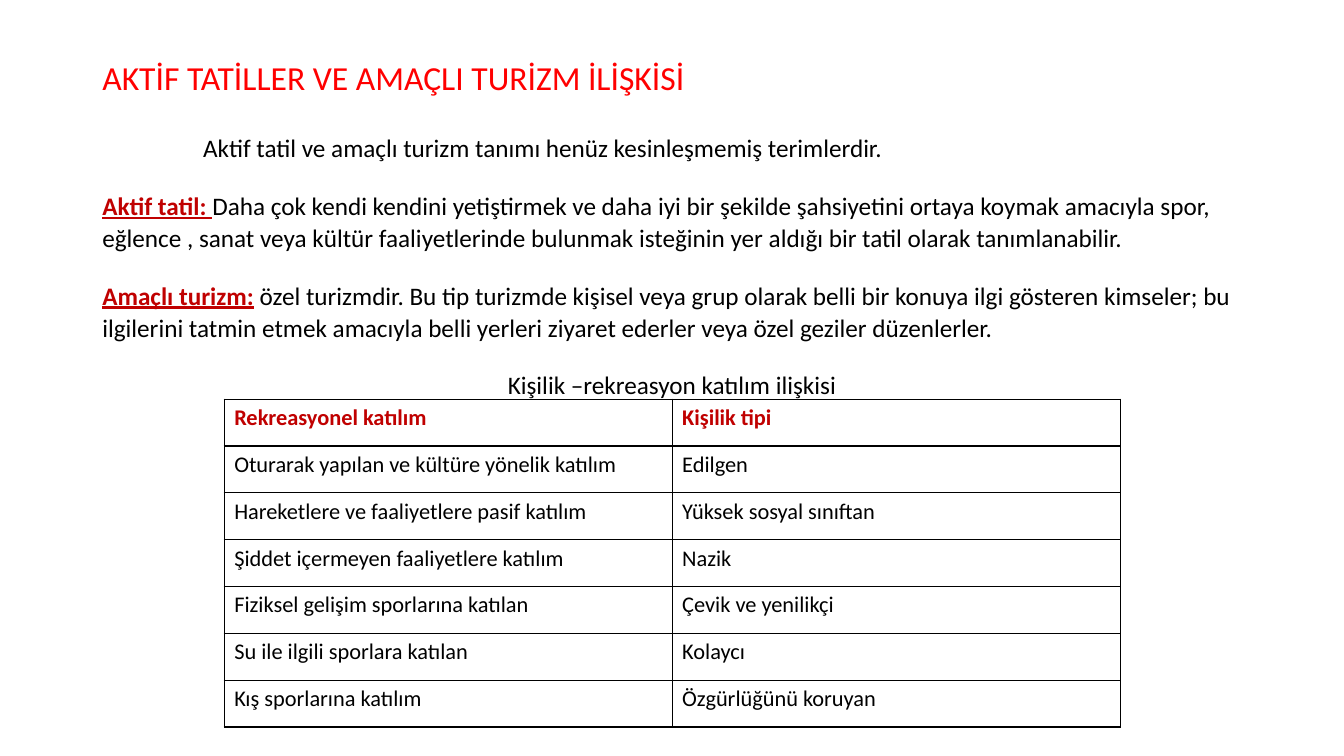
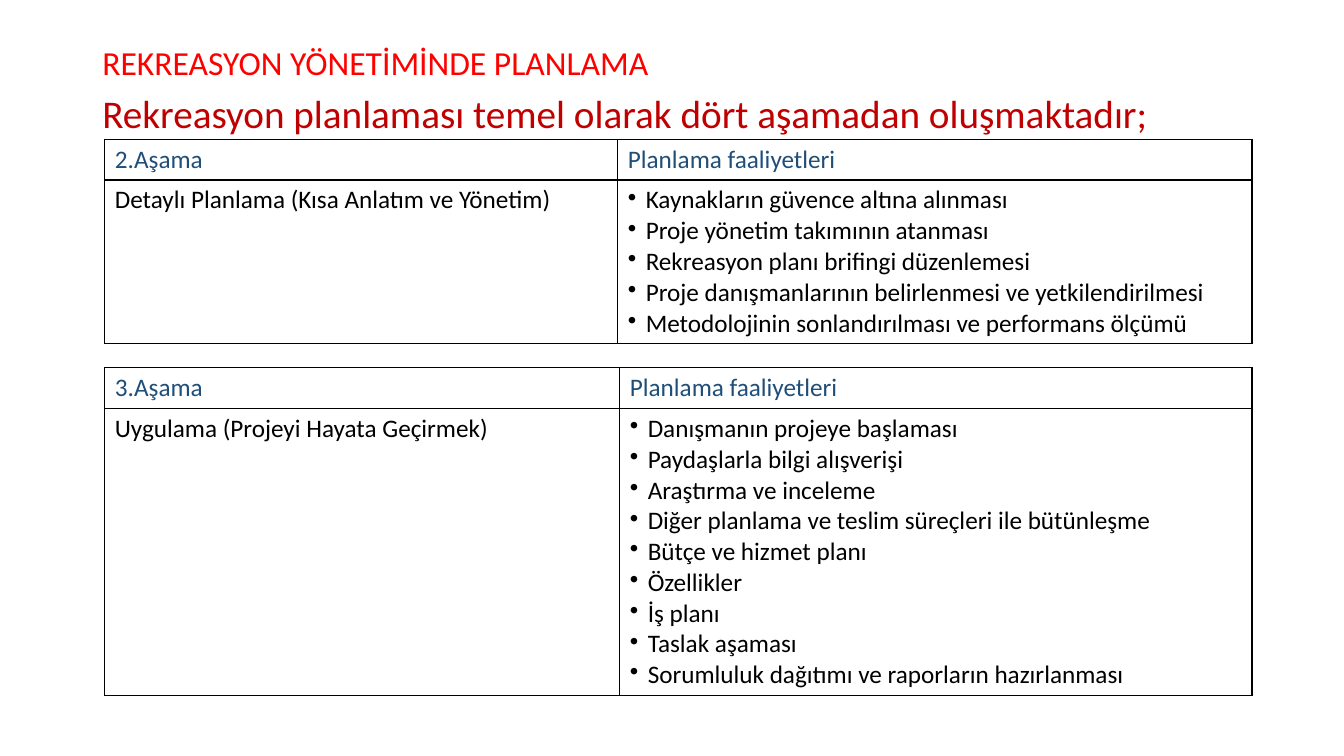
from lxml import etree
from pptx import Presentation
from pptx.dml.color import RGBColor
from pptx.enum.text import MSO_ANCHOR, PP_ALIGN
from pptx.oxml.ns import qn
from pptx.util import Cm, Pt

CENTER = PP_ALIGN.CENTER
MIDDLE = MSO_ANCHOR.MIDDLE
TOP = MSO_ANCHOR.TOP

BLACK, RED, DARK_RED, NAVY = "000000", "FF0000", "C00000", "1F4E79"
TERM = {"bold": True, "underline": True}


def color(value):
    return RGBColor.from_string(value)


class DeckBuilder:
    font = "Calibri"
    left, width = 2.33, 29.21
    bullet_indent = 0.45

    def __init__(self):
        self.deck = Presentation()
        self.deck.slide_width = Cm(33.87)
        self.deck.slide_height = Cm(19.05)
        self.page = None

    def new_page(self):
        self.page = self.deck.slides.add_slide(self.deck.slide_layouts[6])

    def span(self, para, text, size, ink=BLACK, **formats):
        span = para.add_run()
        span.text = text
        span.font.color.rgb = color(ink)
        for name, value in {"name": self.font, "size": Pt(size), **formats}.items():
            setattr(span.font, name, value)

    def text(self, top, height, paragraphs, size, anchor=TOP, **formats):
        box = self.page.shapes.add_textbox(Cm(self.left), Cm(top), Cm(self.width), Cm(height))
        frame = box.text_frame
        frame.word_wrap = True
        frame.vertical_anchor = anchor
        for index, (spans, extra, indent) in enumerate(paragraphs):
            para = frame.add_paragraph() if index else frame.paragraphs[0]
            for name, value in {**formats, **extra}.items():
                setattr(para, name, value)
            if indent:
                para._p.get_or_add_pPr().set("indent", str(Cm(indent)))
            for words, ink, style in spans:
                self.span(para, words, size, ink, **style)

    def title(self, words, height):
        self.text(1.02, height, [([(words, RED, {})], {}, 0)], 24, MIDDLE, line_spacing=0.9)

    def borders(self, cell):
        properties = cell._tc.get_or_add_tcPr()
        for index, side in enumerate(("lnL", "lnR", "lnT", "lnB")):
            line = etree.Element(qn(f"a:{side}"), w=str(Pt(1)))
            fill = etree.SubElement(line, qn("a:solidFill"))
            etree.SubElement(fill, qn("a:srgbClr"), val=BLACK)
            properties.insert(index, line)

    def bullet(self, para):
        properties = para._p.get_or_add_pPr()
        properties.set("marL", str(Cm(self.bullet_indent)))
        properties.set("indent", str(-Cm(self.bullet_indent)))
        etree.SubElement(properties, qn("a:buChar"), char="•")

    def cell(self, cell, content, size, ink, bold):
        cell.fill.background()
        self.borders(cell)
        bulleted = isinstance(content, list)
        for index, words in enumerate(content if bulleted else [content]):
            frame = cell.text_frame
            para = frame.add_paragraph() if index else frame.paragraphs[0]
            if bulleted:
                self.bullet(para)
            self.span(para, words, size, ink, bold=bold)

    def table(self, left, top, columns, heights, rows, size, head_ink, head_bold=False):
        table = self.page.shapes.add_table(
            len(rows), len(columns), Cm(left), Cm(top), Cm(sum(columns)), Cm(sum(heights))
        ).table
        table.first_row = table.horz_banding = False
        for column, width in zip(table.columns, columns):
            column.width = Cm(width)
        for index, (row, height, contents) in enumerate(zip(table.rows, heights, rows)):
            row.height = Cm(height)
            ink, bold = (BLACK, False) if index else (head_ink, head_bold)
            for cell, content in zip(row.cells, contents):
                self.cell(cell, content, size, ink, bold)

    def stage(self, top, columns, number, name, activities):
        heights = [0.25 + 0.775 * lines for lines in (1, len(activities))]
        rows = [(f"{number}.Aşama", "Planlama faaliyetleri"), (name, activities)]
        self.table(2.64, top, columns, heights, rows, 18, NAVY)


def holidays_page(builder):
    builder.new_page()
    builder.title("AKTİF TATİLLER VE AMAÇLI TURİZM İLİŞKİSİ", 1.96)
    paragraphs = [
        ([("Aktif tatil ve amaçlı turizm tanımı henüz kesinleşmemiş terimlerdir.", BLACK, {})], {}, 2.54),
        ([("Aktif tatil: ", DARK_RED, TERM),
          ("Daha çok kendi kendini yetiştirmek ve daha iyi bir şekilde şahsiyetini ortaya koymak "
           "amacıyla spor, eğlence , sanat veya kültür faaliyetlerinde bulunmak isteğinin yer aldığı "
           "bir tatil olarak tanımlanabilir.", BLACK, {})], {}, 0),
        ([("Amaçlı turizm:", DARK_RED, TERM),
          (" özel turizmdir. Bu tip turizmde kişisel veya grup olarak belli bir konuya ilgi gösteren "
           "kimseler; bu ilgilerini tatmin etmek amacıyla belli yerleri ziyaret ederler veya özel "
           "geziler düzenlerler.", BLACK, {})], {}, 0),
        ([("Kişilik –rekreasyon katılım ilişkisi", BLACK, {})], {"alignment": CENTER}, 0),
    ]
    builder.text(3.16, 15.12, paragraphs, 18,
                 line_spacing=1.07, space_before=Pt(10), space_after=Pt(8))
    rows = [
        ("Rekreasyonel katılım", "Kişilik tipi"),
        ("Oturarak yapılan ve kültüre yönelik katılım", "Edilgen"),
        ("Hareketlere ve faaliyetlere pasif katılım", "Yüksek sosyal sınıftan"),
        ("Şiddet içermeyen faaliyetlere katılım", "Nazik"),
        ("Fiziksel gelişim sporlarına katılan", "Çevik ve yenilikçi"),
        ("Su ile ilgili sporlara katılan", "Kolaycı"),
        ("Kış sporlarına katılım", "Özgürlüğünü koruyan"),
    ]
    builder.table(5.65, 10.06, [11.29] * 2, [1.18] * len(rows), rows, 16, DARK_RED, True)


def planning_page(builder):
    builder.new_page()
    builder.title("REKREASYON YÖNETİMİNDE PLANLAMA", 1.24)
    lead = "Rekreasyon planlaması temel olarak dört aşamadan oluşmaktadır;"
    builder.text(2.26, 1.4, [([(lead, DARK_RED, {})], {}, 0)], 28,
                 line_spacing=0.9, space_before=Pt(10))
    builder.stage(3.51, [12.93, 15.98], 2, "Detaylı Planlama (Kısa Anlatım ve Yönetim)", [
        "Kaynakların güvence altına alınması",
        "Proje yönetim takımının atanması",
        "Rekreasyon planı brifingi düzenlemesi",
        "Proje danışmanlarının belirlenmesi ve yetkilendirilmesi",
        "Metodolojinin sonlandırılması ve performans ölçümü",
    ])
    builder.stage(9.27, [12.98, 15.93], 3, "Uygulama (Projeyi Hayata Geçirmek)", [
        "Danışmanın projeye başlaması",
        "Paydaşlarla bilgi alışverişi",
        "Araştırma ve inceleme",
        "Diğer planlama ve teslim süreçleri ile bütünleşme",
        "Bütçe ve hizmet planı",
        "Özellikler",
        "İş planı",
        "Taslak aşaması",
        "Sorumluluk dağıtımı ve raporların hazırlanması",
    ])


def main():
    builder = DeckBuilder()
    holidays_page(builder)
    planning_page(builder)
    builder.deck.save("out.pptx")


if __name__ == "__main__":
    main()
